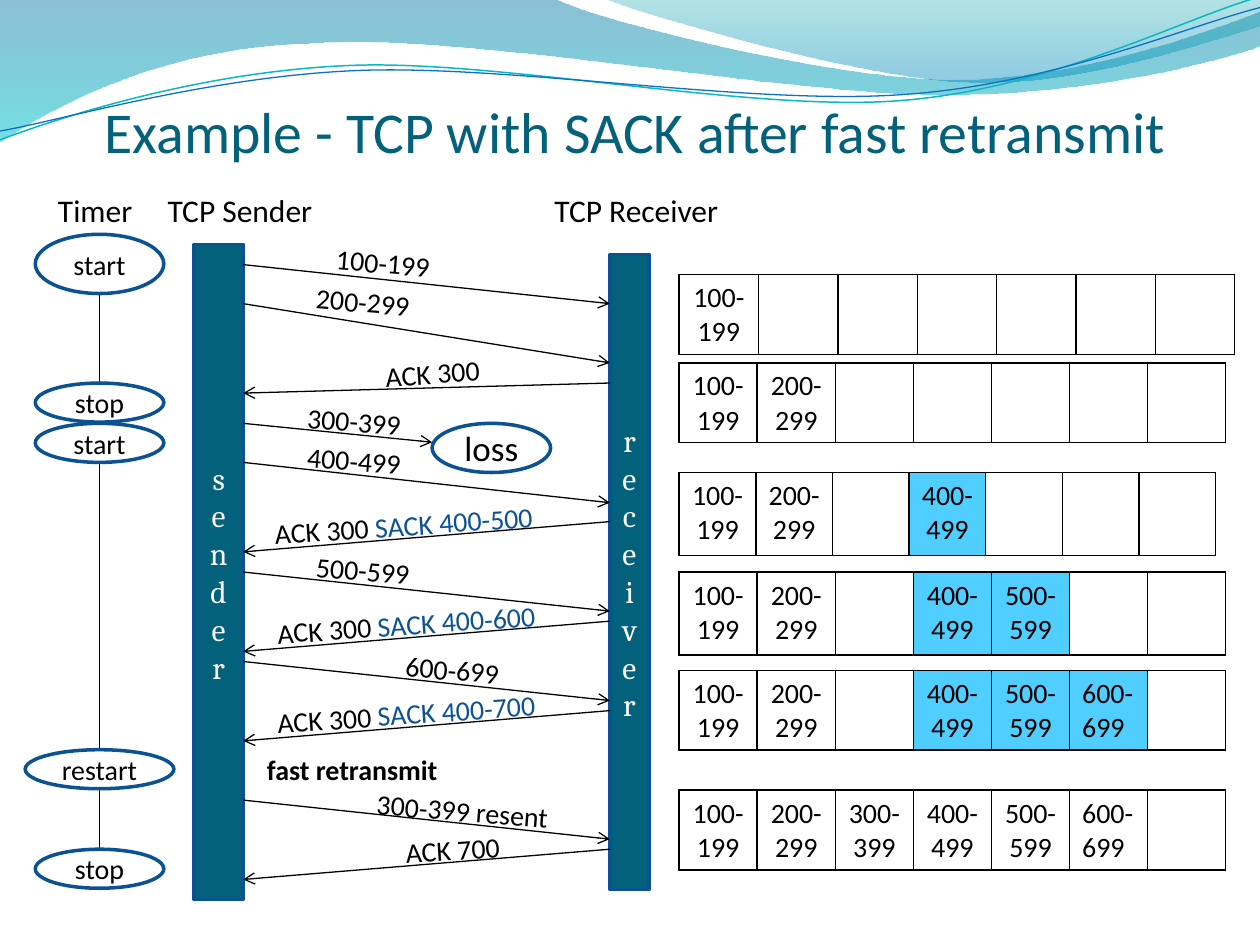
import math

from lxml import etree
from pptx import Presentation
from pptx.dml.color import RGBColor
from pptx.enum import shapes, text
from pptx.oxml import parse_xml
from pptx.oxml.ns import nsdecls, qn
from pptx.util import Inches, Pt

BLACK = RGBColor(0x00, 0x00, 0x00)
WHITE = RGBColor(0xFF, 0xFF, 0xFF)
TEAL = RGBColor(0x04, 0x61, 0x7B)
OUTLINE = RGBColor(0x0B, 0x52, 0x92)
SACK_BLUE = RGBColor(0x0B, 0x53, 0x94)
MARK = RGBColor(0x4F, 0xCE, 0xFF)
WAVE_TEAL = RGBColor(0x0A, 0xB8, 0xBF)
WAVE_BLUE = RGBColor(0x0F, 0x6F, 0xC6)

TILT = -2.7
BANDS = [
    ((0, 0), [(4.4, -0.01), (4.76, 0.17, 6.64, 0.63, 7.58, 0.63),
              (8.53, 0.63, 9.58, 0.26, 10, 0.09), (10.01, 0.36),
              (9.83, 0.44, 8.7, 0.76, 7.46, 0.75), (6.22, 0.75, 3.82, 0.28, 2.57, 0.34),
              (1.29, 0.36, 0.46, 0.83, -0.01, 1.13)],
     [(RGBColor(0x00, 0x74, 0xA1), 45), (RGBColor(0x00, 0xC6, 0xCF), 55)]),
    ((4.79, -0.01), [(5.09, 0.11, 6.82, 0.62, 7.69, 0.65),
                     (8.56, 0.69, 9.61, 0.32, 10, 0.21), (10, 0)],
     [(RGBColor(0x00, 0xA1, 0xA9), 30), (RGBColor(0x00, 0x8B, 0xBF), 45)]),
]
STRANDS = [
    ((0, 1.11), [(0.48, 0.93, 1.58, 0.57, 2.77, 0.52), (3.95, 0.47, 5.93, 0.89, 7.13, 0.8),
                 (8.33, 0.71, 9.38, 0.15, 9.98, -0.02)], WAVE_TEAL, 0.85),
    ((0, 1.04), [(0.47, 0.96, 1.64, 0.61, 2.83, 0.56), (4.03, 0.51, 5.97, 0.84, 7.17, 0.75),
                 (8.36, 0.67, 9.41, 0.21, 10, 0.06)], WAVE_BLUE, 0.75),
]
TIMER_EVENTS = [("start", 0, 0.47, 1.02), ("stop", 1.18, 0.31, 1.02), ("start", 1.5, 0.31, 1.02),
                ("restart", 4.09, 0.31, 1.18), ("stop", 4.88, 0.31, 1.02)]
TIMER_SPANS = [(0.47, 1.18), (1.81, 4.09), (4.41, 4.88)]
SENT = [(0.16, 0.47, "100-199", 0.64, -0.03, 1.18), (0.47, 0.94, "200-299", 0.48, 0.28, 1.18),
        (1.73, 2.05, "400-499", 0.41, 1.54, 1.18), (2.6, 2.91, "500-599", 0.48, 2.41, 1.18),
        (3.31, 3.62, "600-699", 1.19, 3.2, 1.18), (4.41, 4.72, "300-399 resent", 0.96, 4.32, 1.8)]
REPLIES = [(1.1, 1.18, "ACK 300", "", 1.03, 0.83, 1.18),
           (2.2, 2.44, "ACK 300 ", "SACK 400-500", 0.15, 2.04, 2.37),
           (2.99, 3.23, "ACK 300 ", "SACK 400-600", 0.17, 2.83, 2.29),
           (3.7, 3.94, "ACK 300 ", "SACK 400-700", 0.17, 3.54, 2.29),
           (4.8, 5.04, "ACK 700", "", 1.19, 4.61, 1.18)]
SEGMENTS = ["100-199", "200-299", "300-399", "400-499", "500-599", "600-699", ""]
BUFFERS = [(0, 4.41, 0.63, {0}, set()), (0.7, 4.34, 0.63, {0, 1}, set()),
           (1.57, 4.26, 0.66, {0, 1, 3}, {3}), (2.36, 4.34, 0.66, {0, 1, 3, 4}, {3, 4}),
           (3.14, 4.34, 0.63, {0, 1, 3, 4, 5}, {3, 4, 5}), (4.09, 4.34, 0.63, set(range(6)), set())]


def add_run(p, words, size, color=BLACK, font="Calibri", bold=False):
    """Append one formatted run to a paragraph."""
    r = p.add_run()
    r.text = words
    r.font.size, r.font.name, r.font.bold = Pt(size), font, bold
    r.font.color.rgb = color


def add_label(slide, box, runs, size=16, rotation=0, bold=False):
    """Add a text box whose runs are (words, color) pairs and return its frame."""
    sp = slide.shapes.add_textbox(*map(Inches, box))
    sp.rotation = rotation
    tf = sp.text_frame
    tf.word_wrap = True
    for words, color in runs:
        add_run(tf.paragraphs[0], words, size, color, bold=bold)
    return tf


def add_node(slide, kind, box, words, size, fill, color, font="Calibri"):
    """Add an outlined shape with centred text."""
    sp = slide.shapes.add_shape(kind, *map(Inches, box))
    sp.shadow.inherit = False
    sp.fill.solid()
    sp.fill.fore_color.rgb = fill
    sp.line.color.rgb, sp.line.width = OUTLINE, Pt(2)
    tf = sp.text_frame
    tf.word_wrap = True
    tf.vertical_anchor = text.MSO_ANCHOR.MIDDLE
    p = tf.paragraphs[0]
    p.alignment = text.PP_ALIGN.CENTER
    add_run(p, words, size, color, font)


def add_line(slide, x1, y1, x2, y2, arrow=True):
    """Add a thin black line, with an open arrowhead at its end if wanted."""
    cxn = slide.shapes.add_connector(shapes.MSO_CONNECTOR.STRAIGHT, *map(Inches, (x1, y1, x2, y2)))
    cxn.line.color.rgb, cxn.line.width = BLACK, Pt(0.75)
    if arrow:
        etree.SubElement(cxn.line._get_or_add_ln(), qn("a:tailEnd"), type="arrow")
    etree.SubElement(cxn._element.spPr, qn("a:effectLst"))


def add_curve(slide, start, steps, close):
    """Build a freeform whose six-number steps are cubic curves."""
    builder = slide.shapes.build_freeform(Inches(start[0]), Inches(start[1]))
    builder.add_line_segments([(Inches(s[-2]), Inches(s[-1])) for s in steps], close=close)
    sp = builder.convert_to_shape()
    sp.shadow.inherit = False
    for segment, step in zip(list(sp._element.spPr.iter(qn("a:lnTo"))), steps):
        if len(step) == 6:
            segment.tag = qn("a:cubicBezTo")
            for i in (0, 1):
                x, y = Inches(step[2 * i]) - sp.left, Inches(step[2 * i + 1]) - sp.top
                segment.insert(i, parse_xml(f'<a:pt {nsdecls("a")} x="{x}" y="{y}"/>'))
    return sp


def turn(numbers, center, degrees):
    """Rotate a flat tuple of x, y pairs about a centre."""
    c, s = math.cos(math.radians(degrees)), math.sin(math.radians(degrees))
    turned = []
    for x, y in zip(numbers[::2], numbers[1::2]):
        dx, dy = x - center[0], y - center[1]
        turned += [center[0] + dx * c - dy * s, center[1] + dx * s + dy * c]
    return tuple(turned)


def add_waves(slide, left, top):
    """Draw the translucent bands and the two thin strands of the header."""
    def shift(numbers):
        return tuple(n + (top if i % 2 else left) for i, n in enumerate(numbers))

    for start, steps, colors in BANDS:
        sp = add_curve(slide, shift(start), [shift(s) for s in steps], True)
        sp.line.fill.background()
        sp.fill.gradient()
        sp.fill.gradient_angle = 270
        for stop, (color, _) in zip(sp.fill.gradient_stops, colors):
            stop.color.rgb = color
        for clr, (_, opacity) in zip(sp._element.spPr.iter(qn("a:srgbClr")), colors):
            etree.SubElement(clr, qn("a:alpha"), val=str(opacity * 1000))
    center = (left + 4.99, top + 0.58)
    for start, steps, color, width in STRANDS:
        level = [turn(shift(s), center, -TILT) for s in [start] + steps]
        sp = add_curve(slide, level[0], level[1:], False)
        sp.rotation = TILT
        sp.fill.background()
        sp.line.color.rgb, sp.line.width = color, Pt(width)


def add_headings(slide, left, top):
    """Write the title and the tabbed line of column headings."""
    tf = add_label(slide, (left + 0.83, top, 9, 0.87),
                   [("Example - TCP with SACK after fast retransmit", TEAL)], 33)
    tf.margin_left = tf.margin_right = tf.margin_bottom = 0
    tf.vertical_anchor = text.MSO_ANCHOR.BOTTOM
    tf = add_label(slide, (left + 0.2, top + 1.03, 9.61, 5.75),
                   [("Timer\tTCP Sender\tTCP Receiver", BLACK)], 18)
    tf.margin_left = Inches(0.26)
    tabs = etree.SubElement(tf.paragraphs[0]._p.get_or_add_pPr(), qn("a:tabLst"))
    for position in (0.87, 3.94):
        etree.SubElement(tabs, qn("a:tab"), pos=str(Inches(position)), algn="l")


def add_timer(slide, left, top, width):
    """Draw the timer events down a centre line."""
    middle = left + width / 2
    for y1, y2 in TIMER_SPANS:
        add_line(slide, middle, top + y1, middle, top + y2, arrow=False)
    for words, y, h, w in TIMER_EVENTS:
        add_node(slide, shapes.MSO_SHAPE.OVAL, (middle - w / 2, top + y, w, h), words, 16, WHITE, BLACK)


def add_exchange(slide, left, top, width):
    """Draw both hosts and the messages that pass between them."""
    near, far = left + 0.39, left + width - 0.31
    for words, box in (("sender", (left, top, 0.39, 5.2)), ("receiver", (far, top + 0.08, 0.31, 5.04))):
        add_node(slide, shapes.MSO_SHAPE.RECTANGLE, box, words, 18, TEAL, WHITE, "Cambria")
    for y1, y2, words, x, y, w in SENT:
        add_line(slide, near, top + y1, far, top + y2)
        add_label(slide, (near + x, top + y, w, 0.37), [(words, BLACK)], rotation=4.6)
    for y1, y2, ack, sack, x, y, w in REPLIES:
        add_line(slide, far, top + y1, near, top + y2)
        runs = [(ack, BLACK), (sack, SACK_BLUE)] if sack else [(ack, BLACK)]
        add_label(slide, (near + x, top + y, w, 0.37), runs, rotation=-3.9)
    add_line(slide, near, top + 1.42, near + 1.5, top + 1.57)
    add_label(slide, (near + 0.41, top + 1.23, 1.18, 0.37), [("300-399", BLACK)], rotation=4.6)
    add_node(slide, shapes.MSO_SHAPE.OVAL, (near + 1.5, top + 1.42, 0.94, 0.39), "loss", 20, WHITE, BLACK)
    add_label(slide, (near + 0.09, top + 3.98, 1.88, 0.37), [("fast retransmit", BLACK)], bold=True)


def add_buffer(slide, left, top, width, height, held, marked):
    """Draw one receive buffer as a single-row table."""
    count = len(SEGMENTS)
    table = slide.shapes.add_table(1, count, *map(Inches, (left, top, width, height))).table
    table.first_row = table.horz_banding = False
    for i, words in enumerate(SEGMENTS):
        table.columns[i].width = Inches(width / count)
        cell = table.cell(0, i)
        p = cell.text_frame.paragraphs[0]
        if i in held:
            p.alignment = text.PP_ALIGN.LEFT if i == 5 else text.PP_ALIGN.CENTER
            add_run(p, words, 16)
        props = cell._tc.get_or_add_tcPr()
        for side in "LRTB":
            props.append(parse_xml(f'<a:ln{side} w="12700" {nsdecls("a")}><a:solidFill>'
                                   f'<a:srgbClr val="{BLACK}"/></a:solidFill></a:ln{side}>'))
        if i in marked:
            cell.fill.solid()
            cell.fill.fore_color.rgb = MARK
        else:
            cell.fill.background()


def main():
    """Build the slide and save it."""
    prs = Presentation()
    prs.slide_width, prs.slide_height = Inches(10), Inches(7.5)
    slide = prs.slides.add_slide(prs.slide_layouts[6])
    add_waves(slide, 0, 0)
    add_headings(slide, 0, 0.44)
    add_timer(slide, 0.28, 1.86, 1.02)
    add_exchange(slide, 1.54, 1.94, 3.61)
    for y, width, height, held, marked in BUFFERS:
        add_buffer(slide, 5.39, 2.18 + y, width, height, held, marked)
    prs.save("out.pptx")


if __name__ == "__main__":
    main()
